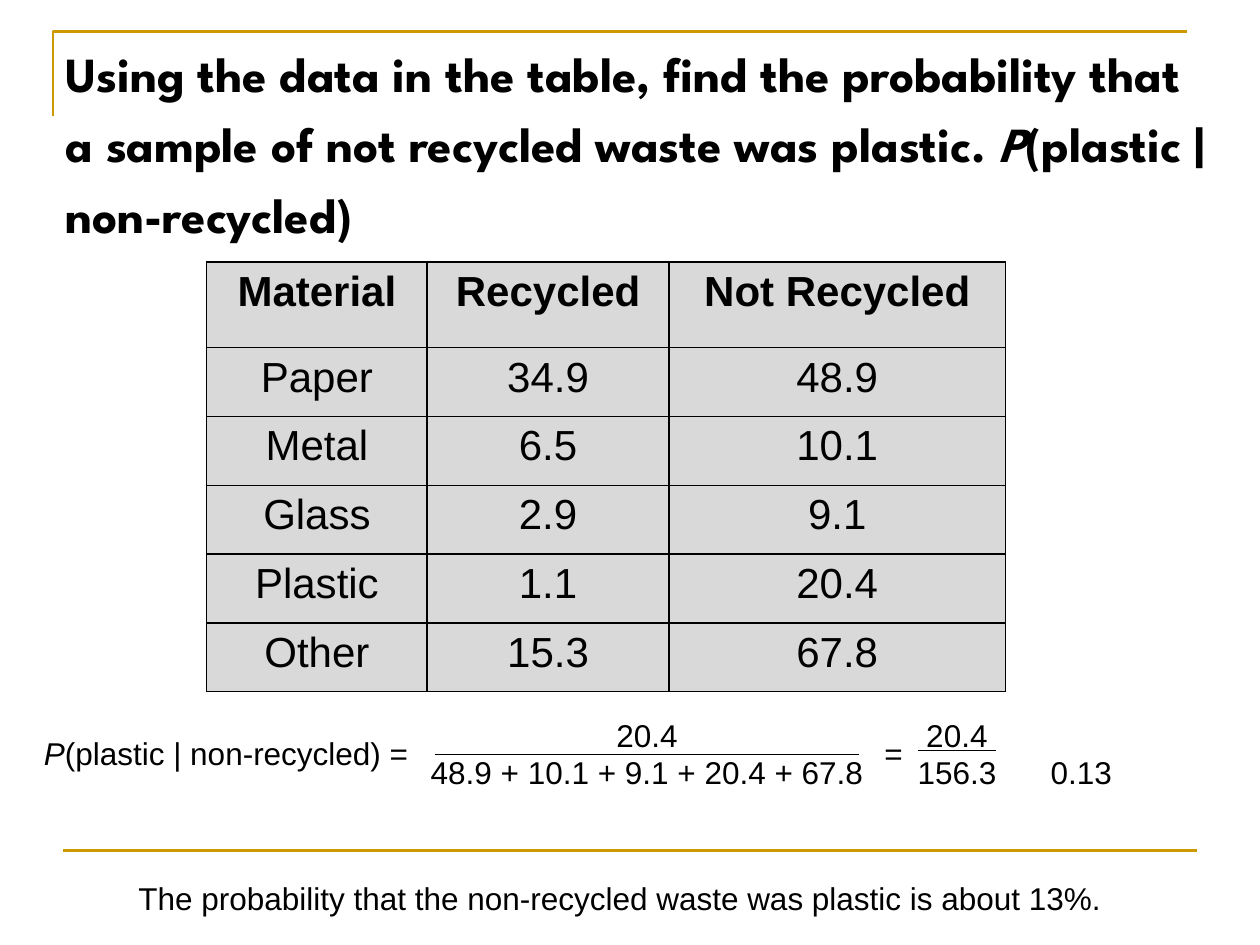
import dataclasses

import lxml.etree
import pptx
import pptx.dml.color
import pptx.enum.shapes
import pptx.enum.text
import pptx.oxml
import pptx.oxml.ns
import pptx.util

COLUMNS, ROWS = 100, 75
BLACK, GOLD, GREY = "000000", "CC9900", "D9D9D9"
LEFT = pptx.enum.text.PP_ALIGN.LEFT
CENTER = pptx.enum.text.PP_ALIGN.CENTER

deck = pptx.Presentation()
deck.slide_width = pptx.util.Inches(10)
deck.slide_height = pptx.util.Inches(7.5)


@dataclasses.dataclass(frozen=True)
class Span:
    text: str
    italic: bool = False
    underline: bool = False


@dataclasses.dataclass(frozen=True)
class Area:
    column: float
    row: float
    columns: float
    rows: float


@dataclasses.dataclass(frozen=True)
class Formula:
    area: Area
    lines: list[list[Span]]
    align: pptx.enum.text.PP_ALIGN = LEFT


@dataclasses.dataclass(frozen=True)
class Rule:
    start: float
    end: float
    row: float
    color: str
    weight: float


def across(columns: float) -> int:
    return round(deck.slide_width * columns / COLUMNS)


def down(rows: float) -> int:
    return round(deck.slide_height * rows / ROWS)


def color_of(value: str) -> pptx.dml.color.RGBColor:
    return pptx.dml.color.RGBColor.from_string(value)


def style(run, size: float, font: str = "Arial", bold: bool = False) -> None:
    run.font.size = pptx.util.Pt(size)
    run.font.name = font
    run.font.bold = bold
    run.font.color.rgb = color_of(BLACK)


def write(paragraph, spans: list[Span], size: float, font: str = "Arial", bold: bool = False) -> None:
    for span in spans:
        run = paragraph.add_run()
        run.text = span.text
        style(run, size, font, bold)
        run.font.italic = span.italic
        run.font.underline = span.underline


def draw_title(slide, area: Area, spans: list[Span]) -> None:
    title = slide.shapes.title
    title.left, title.top = across(area.column), down(area.row)
    title.width, title.height = across(area.columns), down(area.rows)
    frame = title.text_frame
    frame.word_wrap = True
    frame.auto_size = pptx.enum.text.MSO_AUTO_SIZE.SHAPE_TO_FIT_TEXT
    frame.vertical_anchor = pptx.enum.text.MSO_ANCHOR.TOP
    paragraph = frame.paragraphs[0]
    paragraph.alignment = LEFT
    paragraph.line_spacing = 1.2
    write(paragraph, spans, 28, "League Spartan", True)


def draw_formula(slide, formula: Formula) -> None:
    area = formula.area
    box = slide.shapes.add_textbox(
        across(area.column), down(area.row), across(area.columns), down(area.rows))
    frame = box.text_frame
    frame.word_wrap = False
    frame.auto_size = pptx.enum.text.MSO_AUTO_SIZE.SHAPE_TO_FIT_TEXT
    for index, spans in enumerate(formula.lines):
        paragraph = frame.add_paragraph() if index else frame.paragraphs[0]
        paragraph.alignment = formula.align
        write(paragraph, spans, 18)


def draw_rule(slide, rule: Rule) -> None:
    line = slide.shapes.add_connector(
        pptx.enum.shapes.MSO_CONNECTOR.STRAIGHT,
        across(rule.start), down(rule.row), across(rule.end), down(rule.row))
    line.line.color.rgb = color_of(rule.color)
    line.line.width = pptx.util.Pt(rule.weight)
    lxml.etree.SubElement(line._element.spPr, pptx.oxml.ns.qn("a:effectLst"))


def draw_corner(slide, area: Area) -> None:
    left, top = across(area.column), down(area.row)
    builder = slide.shapes.build_freeform(left, top + down(area.rows))
    builder.add_line_segments([(left, top), (left + across(area.columns), top)], close=False)
    corner = builder.convert_to_shape()
    corner.shadow.inherit = False
    corner.fill.background()
    corner.line.color.rgb = color_of(GOLD)
    corner.line.width = pptx.util.Pt(1.5)


def add_borders(cell) -> None:
    properties = cell._tc.get_or_add_tcPr()
    namespace = pptx.oxml.ns.nsdecls("a")
    for index, side in enumerate(("lnL", "lnR", "lnT", "lnB")):
        properties.insert(index, pptx.oxml.parse_xml(
            f'<a:{side} {namespace} w="12700"><a:solidFill><a:srgbClr val="{BLACK}"/>'
            f'</a:solidFill></a:{side}>'))


def draw_table(slide, area: Area, widths: list[float], heights: list[float],
               records: list[tuple[str, ...]]) -> None:
    table = slide.shapes.add_table(
        len(heights), len(widths), across(area.column), down(area.row),
        across(area.columns), down(area.rows)).table
    for column, width in zip(table.columns, widths):
        column.width = across(width)
    for index, (row, height, record) in enumerate(zip(table.rows, heights, records)):
        row.height = down(height)
        for cell, value in zip(row.cells, record):
            cell.text_frame.text = value
            paragraph = cell.text_frame.paragraphs[0]
            paragraph.alignment = CENTER
            style(paragraph.runs[0], 24, bold=index == 0)
            cell.fill.solid()
            cell.fill.fore_color.rgb = color_of(GREY)
            add_borders(cell)


WASTE = [
    ("Material", "Recycled", "Not Recycled"),
    ("Paper", "34.9", "48.9"),
    ("Metal", "6.5", "10.1"),
    ("Glass", "2.9", "9.1"),
    ("Plastic", "1.1", "20.4"),
    ("Other", "15.3", "67.8"),
]
WIDTHS = [17.5, 19.2, 26.7]
HEIGHTS = [6.8] + [5.46] * (len(WASTE) - 1)
QUESTION = [
    Span("Using the data in the table, find the probability that "
         "a sample of not recycled waste was plastic. "),
    Span("P", italic=True),
    Span("(plastic | non-recycled)"),
]
FORMULAS = [
    Formula(Area(10, 69.3, 78.4, 4),
            [[Span("The probability that the non-recycled waste was plastic is about 13%.")]]),
    Formula(Area(2.5, 57.8, 31.6, 4),
            [[Span("P", italic=True), Span("(plastic | non-recycled) =")]]),
    Formula(Area(33, 56.3, 36.7, 7),
            [[Span("20.4")], [Span("48.9 + 10.1 + 9.1 + 20.4 + 67.8")]], CENTER),
    Formula(Area(69.2, 57.8, 3.5, 4), [[Span("=")]]),
    Formula(Area(71.8, 56.3, 8.3, 7),
            [[Span(" 20.4 ", underline=True)], [Span("156.3")]], CENTER),
    Formula(Area(82.4, 59.3, 6.9, 4), [[Span("0.13")]]),
]
RULES = [
    Rule(5, 95, 67.5, GOLD, 1.5),
    Rule(34.5, 68.2, 59.9, BLACK, 0.75),
]


def main() -> None:
    slide = deck.slides.add_slide(deck.slide_layouts[5])
    draw_corner(slide, Area(4.2, 2.5, 90, 6.7))
    draw_title(slide, Area(4.2, 2, 92.5, 18), QUESTION)
    draw_table(slide, Area(16.4, 20.8, sum(WIDTHS), sum(HEIGHTS)), WIDTHS, HEIGHTS, WASTE)
    for rule in RULES:
        draw_rule(slide, rule)
    for formula in FORMULAS:
        draw_formula(slide, formula)
    deck.save("out.pptx")


if __name__ == "__main__":
    main()
